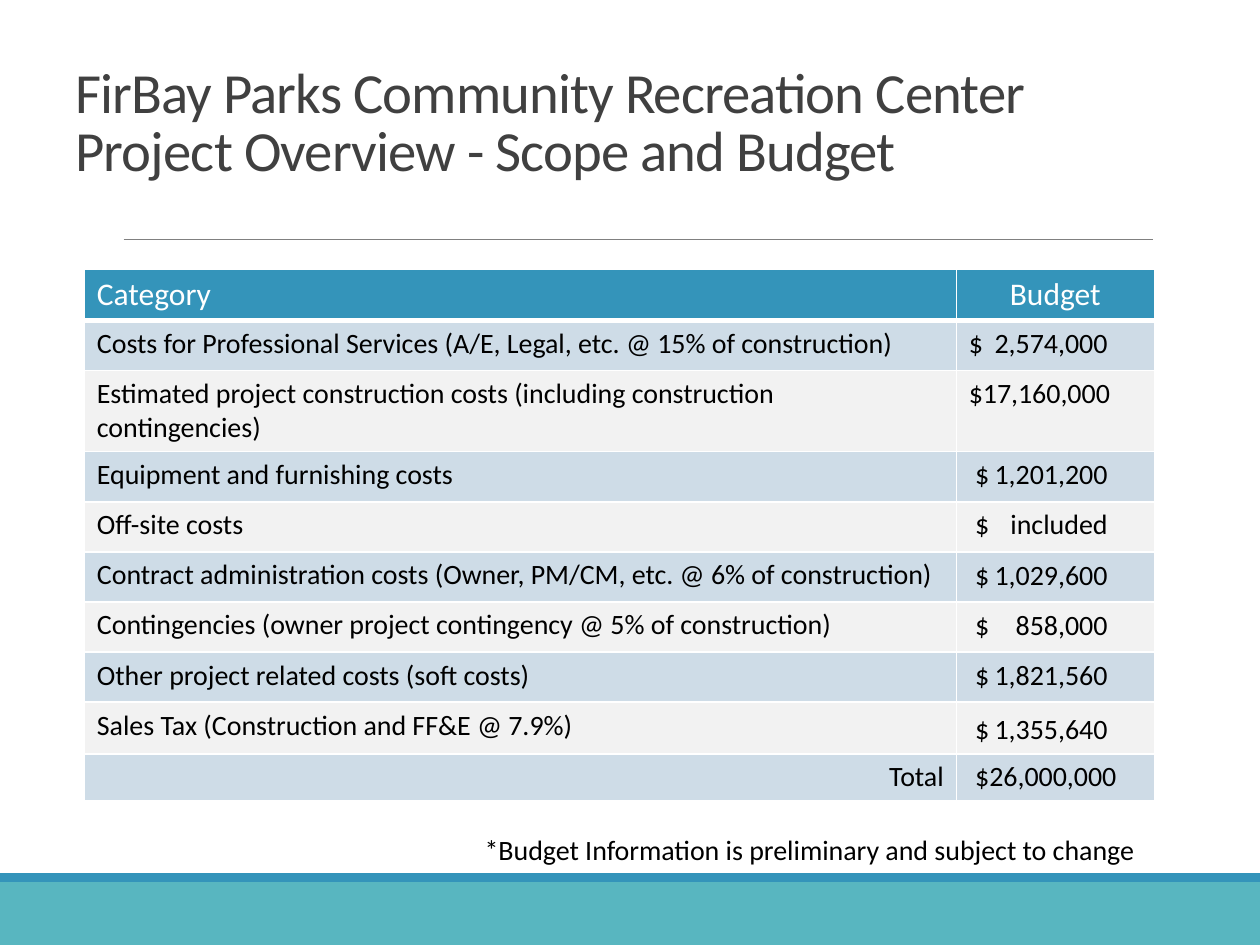
"""Build the project scope and budget slide."""
from dataclasses import dataclass

from lxml import etree
from pptx import Presentation
from pptx.dml.color import RGBColor
from pptx.enum import shapes, text
from pptx.oxml import ns
from pptx.util import Cm, Pt

COLORS = {
    "teal": "58B6C0", "blue": "3494BA", "rule": "808080", "title": "404040",
    "white": "FFFFFF", "black": "000000", "label_band": "CEDCE7",
    "amount_band": "CEDBE6", "plain": "F2F2F2",
}
FONT = "Calibri"
ROW_HEIGHT = 1.01
AMOUNT_END = 2.8


@dataclass(frozen=True)
class BudgetLine:
    label: str
    amount: str
    indent: float = 0.13
    drop: float = 0.0
    height: float = ROW_HEIGHT
    align: text.PP_ALIGN = text.PP_ALIGN.LEFT


@dataclass(frozen=True)
class Bar:
    top: float
    height: float
    color: str


BUDGET = [
    BudgetLine("Costs for Professional Services (A/E, Legal, etc. @ 15% of construction)",
               "$\t2,574,000", indent=0),
    BudgetLine("Estimated project construction costs (including construction contingencies)",
               "$17,160,000", indent=0),
    BudgetLine("Equipment and furnishing costs", "$\t1,201,200"),
    BudgetLine("Off-site costs", "$\tincluded"),
    BudgetLine("Contract administration costs (Owner, PM/CM, etc. @ 6% of construction)",
               "$\t1,029,600"),
    BudgetLine("Contingencies (owner project contingency @ 5% of construction)", "$\t858,000"),
    BudgetLine("Other project related costs (soft costs)", "$\t1,821,560"),
    BudgetLine("Sales Tax (Construction and FF&E @ 7.9%)", "$\t1,355,640", drop=0.08, height=1.04),
    BudgetLine("Total", "$26,000,000", height=0.91, align=text.PP_ALIGN.RIGHT),
]
BARS = [Bar(17.78, 1.27, "teal"), Bar(17.6, 0.18, "blue")]
TITLE_LINES = ["FirBay Parks Community Recreation Center", "Project Overview - Scope and Budget"]


def rgb(name: str) -> RGBColor:
    return RGBColor.from_string(COLORS[name])


def add_run(paragraph, words: str, size: float, color: str):
    run = paragraph.add_run()
    run.text = words
    run.font.name, run.font.size, run.font.bold = FONT, Pt(size), False
    run.font.color.rgb = rgb(color)
    return run


def draw_bar(slide, bar: Bar, width: int) -> None:
    band = slide.shapes.add_shape(shapes.MSO_SHAPE.RECTANGLE, 0, Cm(bar.top), width, Cm(bar.height))
    band.shadow.inherit = False
    band.fill.solid()
    band.fill.fore_color.rgb = rgb(bar.color)
    band.line.fill.background()


def draw_rule(slide) -> None:
    rule = slide.shapes.add_connector(shapes.MSO_CONNECTOR.STRAIGHT,
                                      Cm(2.49), Cm(4.83), Cm(23.24), Cm(4.83))
    rule.line.color.rgb = rgb("rule")
    rule.line.width = Pt(0.5)
    etree.SubElement(rule._element.spPr, ns.qn("a:effectLst"))


def write_title(slide) -> None:
    title = slide.shapes.title
    title.left, title.top, title.width, title.height = Cm(1.27), Cm(0.84), Cm(21.97), Cm(2.97)
    frame = title.text_frame
    frame.auto_size = text.MSO_AUTO_SIZE.NONE
    frame.vertical_anchor = text.MSO_ANCHOR.BOTTOM
    heading = frame.paragraphs[0]
    heading.alignment = text.PP_ALIGN.LEFT
    heading.line_spacing = 0.85
    for index, line in enumerate(TITLE_LINES):
        if index:
            heading.add_line_break()
        run = add_run(heading, line, 32.4, "title")
        run.font._element.set("spc", "-50")


def fill_cell(cell, words: str, size: float, color: str, fill: str, align: text.PP_ALIGN):
    cell.fill.solid()
    cell.fill.fore_color.rgb = rgb(fill)
    paragraph = cell.text_frame.paragraphs[0]
    paragraph.alignment = align
    add_run(paragraph, words, size, color)
    return paragraph


def underline_cell(cell, points: float) -> None:
    edge = etree.Element(ns.qn("a:lnB"), w=str(Pt(points)))
    paint = etree.SubElement(edge, ns.qn("a:solidFill"))
    etree.SubElement(paint, ns.qn("a:srgbClr"), val=COLORS["white"])
    cell._tc.get_or_add_tcPr().insert(0, edge)


def add_right_tab(paragraph, position: float) -> None:
    stops = etree.SubElement(paragraph._p.get_or_add_pPr(), ns.qn("a:tabLst"))
    etree.SubElement(stops, ns.qn("a:tab"), pos=str(Cm(position)), algn="r")


def draw_budget(slide) -> None:
    rows = len(BUDGET) + 1
    table = slide.shapes.add_table(rows, 2, Cm(1.7), Cm(5.43), Cm(21.57), Cm(ROW_HEIGHT * rows)).table
    table.columns[0].width, table.columns[1].width = Cm(17.58), Cm(3.99)
    table.rows[0].height = Cm(ROW_HEIGHT)
    headings = [("Category", text.PP_ALIGN.LEFT), ("Budget", text.PP_ALIGN.CENTER)]
    for column, (heading, align) in enumerate(headings):
        fill_cell(table.cell(0, column), heading, 18, "white", "blue", align)
        underline_cell(table.cell(0, column), 3)
    for row, line in enumerate(BUDGET, start=1):
        table.rows[row].height = Cm(line.height)
        banded = row % 2 == 1
        fill_cell(table.cell(row, 0), line.label, 16, "black",
                  "label_band" if banded else "plain", line.align)
        amount = table.cell(row, 1)
        amount.margin_left = Cm(0.25 + line.indent)
        amount.margin_top = Cm(0.13 + line.drop)
        paragraph = fill_cell(amount, line.amount, 16, "black",
                              "amount_band" if banded else "plain", text.PP_ALIGN.LEFT)
        if "\t" in line.amount:
            add_right_tab(paragraph, AMOUNT_END - line.indent)


def write_note(slide) -> None:
    note = slide.shapes.add_textbox(Cm(9.52), Cm(16.66), Cm(13.72), Cm(0.94)).text_frame
    note.word_wrap = True
    add_run(note.paragraphs[0], "*Budget Information is preliminary and subject to change", 16, "black")


def main() -> None:
    deck = Presentation()
    deck.slide_width, deck.slide_height = Cm(25.4), Cm(19.05)
    slide = deck.slides.add_slide(deck.slide_layouts[5])
    for bar in BARS:
        draw_bar(slide, bar, deck.slide_width)
    draw_rule(slide)
    write_title(slide)
    draw_budget(slide)
    write_note(slide)
    deck.save("out.pptx")


if __name__ == "__main__":
    main()
